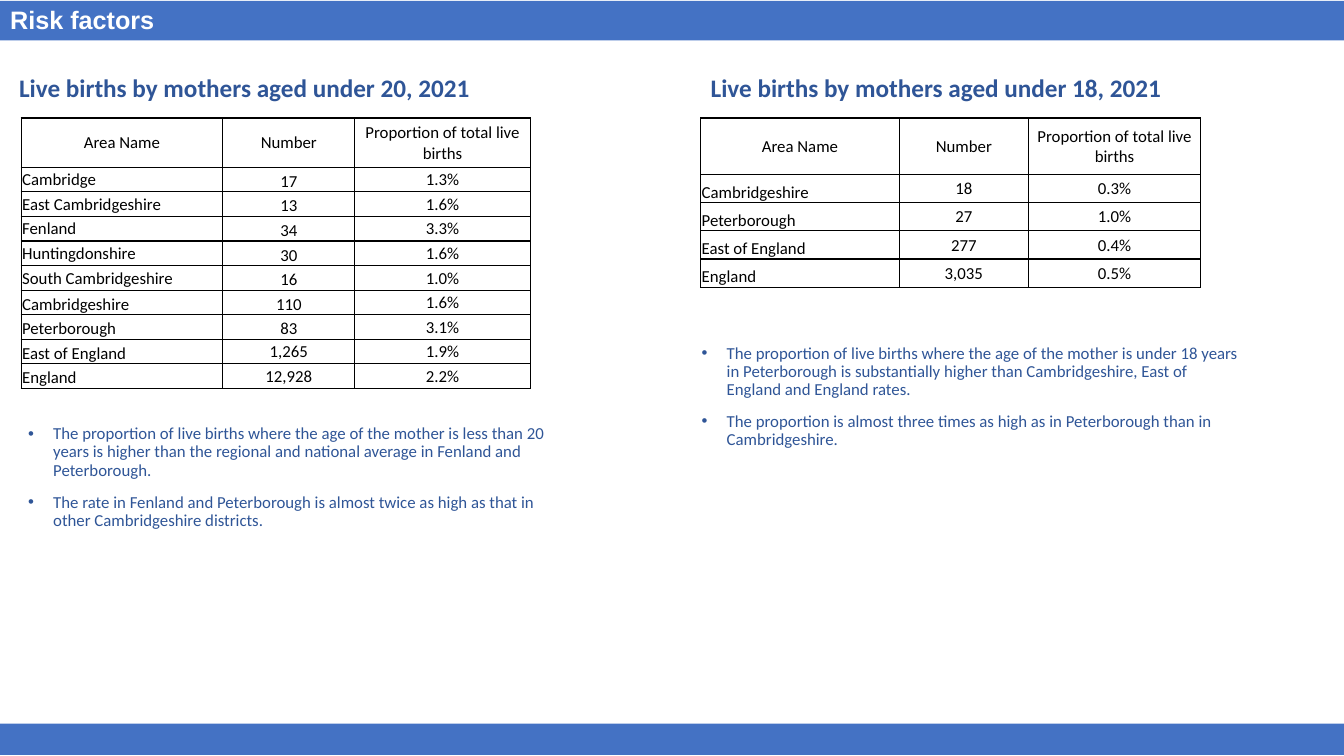
from lxml.etree import SubElement
from pptx import Presentation
from pptx.dml.color import RGBColor
from pptx.enum.shapes import MSO_SHAPE
from pptx.enum.text import MSO_ANCHOR as ANCHOR, MSO_AUTO_SIZE as AUTO, PP_ALIGN as ALIGN
from pptx.oxml.ns import qn
from pptx.util import Inches, Pt

COLORS = {"bar": "4472C4", "text": "2F5597", "black": "000000", "white": "FFFFFF"}
UNDER_20 = [
    ("Cambridge", "17", "1.3%"),
    ("East Cambridgeshire", "13", "1.6%"),
    ("Fenland", "34", "3.3%"),
    ("Huntingdonshire", "30", "1.6%"),
    ("South Cambridgeshire", "16", "1.0%"),
    ("Cambridgeshire", "110", "1.6%"),
    ("Peterborough", "83", "3.1%"),
    ("East of England", "1,265", "1.9%"),
    ("England", "12,928", "2.2%"),
]
UNDER_18 = [
    ("Cambridgeshire", "18", "0.3%"),
    ("Peterborough", "27", "1.0%"),
    ("East of England", "277", "0.4%"),
    ("England", "3,035", "0.5%"),
]
HEADER = ("Area Name", "Number", "Proportion of total live births")
NOTES_20 = [
    "The proportion of live births where the age of the mother is less than 20 years is higher "
    "than the regional and national average in Fenland and Peterborough.",
    "The rate in Fenland and Peterborough is almost twice as high as that in other "
    "Cambridgeshire districts.",
]
NOTES_18 = [
    "The proportion of live births where the age of the mother is under 18 years in Peterborough "
    "is substantially higher than Cambridgeshire, East of England and England rates.",
    "The proportion is almost three times as high as in Peterborough than in Cambridgeshire.",
]


def rgb(name):
    """Return the named colour."""
    return RGBColor.from_string(COLORS[name])


def write(p, text, size=12, font="Calibri", color="text", bold=False,
          align=ALIGN.LEFT, line=None, before=0):
    """Write formatted text into a paragraph."""
    p.alignment, p.line_spacing, p.space_before = align, line, Pt(before)
    r = p.add_run()
    r.text = text
    r.font.size, r.font.name, r.font.bold = Pt(size), font, bold
    r.font.color.rgb = rgb(color)


class Deck:
    """Holds the presentation style and the current slide."""

    def __init__(self):
        """Start a wide presentation with one title-only slide."""
        self.prs = Presentation()
        self.prs.slide_width, self.prs.slide_height = Inches(13.33), Inches(7.5)
        self.s = self.prs.slides.add_slide(self.prs.slide_layouts[5])

    def bar(self, y, h):
        """Draw a full-width band."""
        sp = self.s.shapes.add_shape(MSO_SHAPE.RECTANGLE, 0, Inches(y),
                                     self.prs.slide_width, Inches(h))
        sp.shadow.inherit = False
        sp.fill.solid()
        sp.fill.fore_color.rgb = rgb("bar")
        sp.line.fill.background()

    def title(self, text):
        """Place the title in front of the top band."""
        sp = self.s.shapes.title
        sp.left, sp.top = Inches(0), Inches(0.03)
        sp.width, sp.height = self.prs.slide_width, Inches(0.35)
        tf = sp.text_frame
        tf.auto_size, tf.vertical_anchor = AUTO.NONE, ANCHOR.TOP
        write(tf.paragraphs[0], text, size=18, font="Arial", color="white", bold=True, line=0.9)
        self.s.shapes.element.append(sp.element)

    def text_box(self, x, y, w, h, anchor=ANCHOR.TOP):
        """Add a wrapping text box and return its frame."""
        tf = self.s.shapes.add_textbox(Inches(x), Inches(y), Inches(w), Inches(h)).text_frame
        tf.word_wrap, tf.vertical_anchor = True, anchor
        return tf

    def heading(self, text, x, w):
        """Add a heading above a table."""
        tf = self.text_box(x, 0.48, w, 0.59, ANCHOR.BOTTOM)
        write(tf.paragraphs[0], text, size=18, bold=True, line=0.9, before=10)

    def bullets(self, items, x, y, h):
        """Add a bulleted list."""
        tf = self.text_box(x, y, 5.56, h)
        for i, item in enumerate(items):
            p = tf.add_paragraph() if i else tf.paragraphs[0]
            write(p, item, line=0.9, before=10)
            pPr = p._p.get_or_add_pPr()
            pPr.set("marL", str(Inches(0.25)))
            pPr.set("indent", str(Inches(-0.25)))
            SubElement(pPr, qn("a:buFont"), typeface="Arial")
            SubElement(pPr, qn("a:buChar"), char="•")

    def cell(self, cell, text, align, anchor):
        """Fill one bordered table cell."""
        cell.margin_left = cell.margin_right = cell.margin_top = Inches(0.01)
        cell.margin_bottom = 0
        cell.vertical_anchor = anchor
        write(cell.text_frame.paragraphs[0], text, color="black", align=align)
        tcPr = cell._tc.get_or_add_tcPr()
        for side in ("lnL", "lnR", "lnT", "lnB"):
            ln = SubElement(tcPr, qn(f"a:{side}"), w=str(Pt(1)))
            fill = SubElement(ln, qn("a:solidFill"))
            SubElement(fill, qn("a:srgbClr"), val=COLORS["black"])
        cell.fill.background()

    def table(self, rows, x, widths, row_h, head_h, low_names, low_numbers):
        """Add a table; the low_ ranges give the rows set at the cell bottom."""
        shape = self.s.shapes.add_table(len(rows) + 1, len(widths), Inches(x), Inches(1.17),
                                        Inches(sum(widths)), Inches(head_h + row_h * len(rows)))
        tbl = shape.table
        tbl.first_row = tbl.horz_banding = False
        for col, w in zip(tbl.columns, widths):
            col.width = Inches(w)
        low = (low_names, low_numbers, ())
        for i, row in enumerate([HEADER, *rows]):
            tbl.rows[i].height = Inches(row_h if i else head_h)
            for j, text in enumerate(row):
                align = ALIGN.LEFT if i and j == 0 else ALIGN.CENTER
                anchor = ANCHOR.BOTTOM if i in low[j] else ANCHOR.MIDDLE
                self.cell(tbl.cell(i, j), text, align, anchor)


def main():
    """Build the slide and save it."""
    deck = Deck()
    deck.bar(0.01, 0.39)
    deck.bar(7.18, 0.31)
    deck.heading("Live births by mothers aged under 20, 2021", 0.09, 6.49)
    deck.heading("Live births by mothers aged under 18, 2021", 6.95, 6.27)
    deck.bullets(NOTES_18, 6.86, 3.37, 1.89)
    deck.bullets(NOTES_20, 0.18, 4.17, 1.93)
    deck.title("Risk factors")
    deck.table(UNDER_20, 0.21, (2, 1.31, 1.74), 0.244, 0.49, range(6, 10), range(1, 8))
    deck.table(UNDER_18, 6.95, (1.97, 1.28, 1.71), 0.28, 0.56, range(1, 5), ())
    deck.prs.save("out.pptx")


if __name__ == "__main__":
    main()
